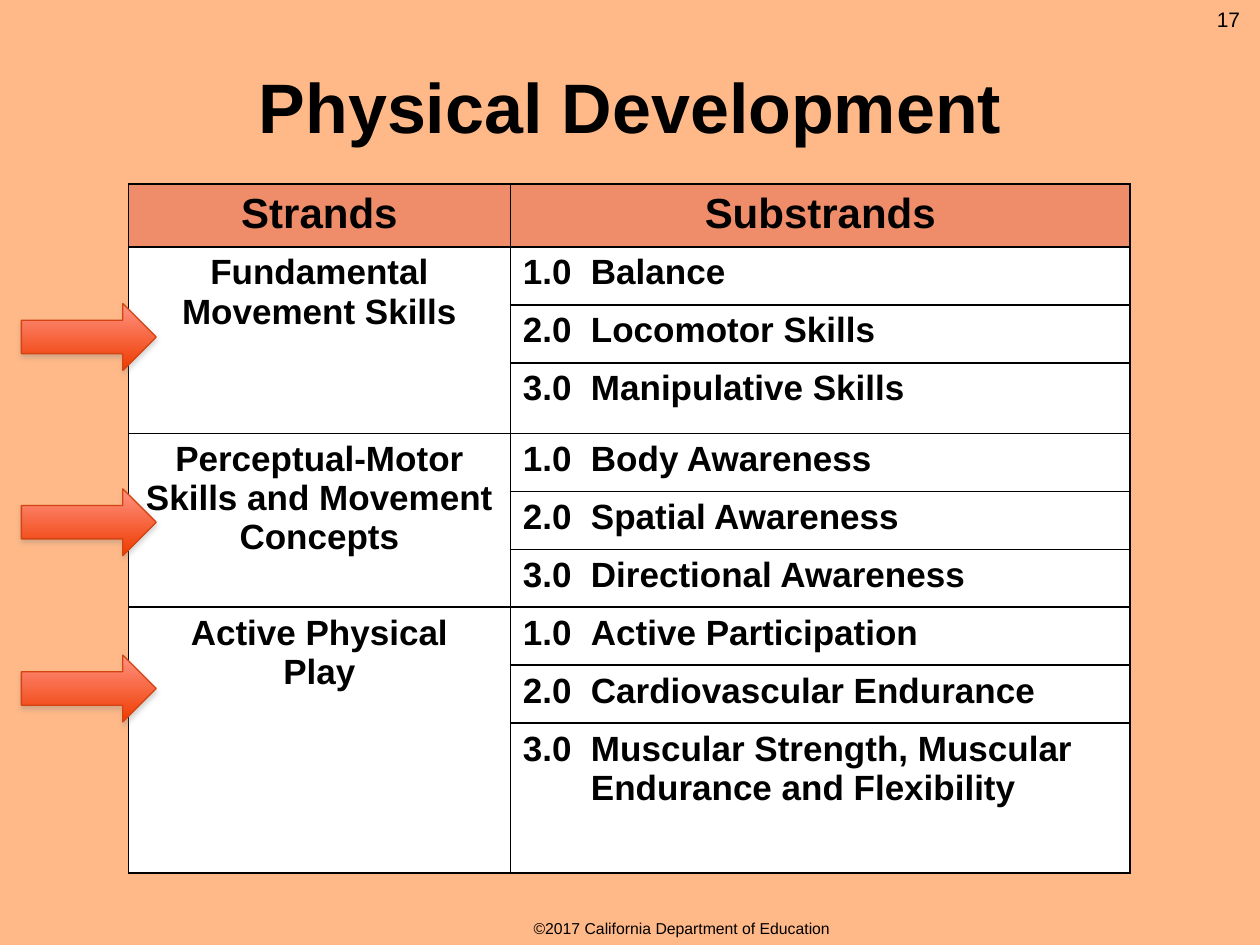
from lxml.etree import SubElement
from pptx import Presentation
from pptx.dml.color import RGBColor
from pptx.enum.shapes import MSO_SHAPE
from pptx.enum.text import MSO_ANCHOR, PP_ALIGN
from pptx.oxml.ns import qn
from pptx.util import Inches, Pt

BACKGROUND = RGBColor(0xFF, 0xB9, 0x88)
BLACK = RGBColor(0x00, 0x00, 0x00)
WHITE = RGBColor(0xFF, 0xFF, 0xFF)
HEADER_FILL = RGBColor(0xEF, 0x8C, 0x6A)
ARROW_TOP = RGBColor(0xFF, 0x93, 0x83)
ARROW_BOTTOM = RGBColor(0xEF, 0x3B, 0x00)
ARROW_LINE = RGBColor(0xD3, 0x44, 0x12)
SHADOW = RGBColor(0x80, 0x80, 0x80)

NUMBER_INDENT = Inches(0.54)
COLUMN_WIDTHS = (3.03, 4.92)
ROW_HEIGHTS = (0.5, 0.46, 0.46, 0.56, 0.46, 0.46, 0.46, 0.46, 0.46, 1.19)
ARROW_TOPS = (2.41, 3.88, 5.2)
STRANDS = (
    ("Fundamental Movement Skills",
     ("Balance", "Locomotor Skills", "Manipulative Skills")),
    ("Perceptual-Motor Skills and Movement Concepts",
     ("Body Awareness", "Spatial Awareness", "Directional Awareness")),
    ("Active Physical\nPlay",
     ("Active Participation", "Cardiovascular Endurance",
      "Muscular Strength, Muscular Endurance and Flexibility")),
)


def write_text(text_frame, text, size, bold=False, align=PP_ALIGN.CENTER):
    """Fill a text frame with evenly formatted paragraphs."""
    text_frame.text = text
    for paragraph in text_frame.paragraphs:
        paragraph.alignment = align
        for run in paragraph.runs:
            run.font.name = "Arial"
            run.font.size = Pt(size)
            run.font.bold = bold
            run.font.color.rgb = BLACK


def add_text(slide, text, left, top, width, height, size, bold=False, anchor=MSO_ANCHOR.MIDDLE):
    """Add a wrapped, centred text box."""
    box = slide.shapes.add_textbox(Inches(left), Inches(top), Inches(width), Inches(height))
    box.text_frame.word_wrap = True
    box.text_frame.vertical_anchor = anchor
    write_text(box.text_frame, text, size, bold)


def add_borders(cell):
    """Draw a thin black line on each side of a cell."""
    properties = cell._tc.get_or_add_tcPr()
    for side in ("lnL", "lnR", "lnT", "lnB"):
        line = SubElement(properties, qn(f"a:{side}"), w=str(Pt(1)))
        fill = SubElement(line, qn("a:solidFill"))
        SubElement(fill, qn("a:srgbClr"), val=str(BLACK))


def hang_number(paragraph):
    """Hang the number of a substrand in front of its wrapped text."""
    properties = paragraph._p.get_or_add_pPr()
    properties.set("marL", str(NUMBER_INDENT))
    properties.set("indent", str(-NUMBER_INDENT))


def add_strand_table(slide):
    """Add the table of strands with their numbered substrands."""
    frame = slide.shapes.add_table(
        len(ROW_HEIGHTS), len(COLUMN_WIDTHS), Inches(1.02), Inches(1.46),
        Inches(sum(COLUMN_WIDTHS)), Inches(sum(ROW_HEIGHTS)))
    table = frame.table
    for column, width in zip(table.columns, COLUMN_WIDTHS):
        column.width = Inches(width)
    for index, height in enumerate(ROW_HEIGHTS):
        table.rows[index].height = Inches(height)
        for cell in table.rows[index].cells:
            add_borders(cell)
            cell.fill.solid()
            cell.fill.fore_color.rgb = WHITE if index else HEADER_FILL
    for column, heading in enumerate(("Strands", "Substrands")):
        write_text(table.cell(0, column).text_frame, heading, 24, True)
    row = 1
    for strand, substrands in STRANDS:
        strand_cell = table.cell(row, 0)
        strand_cell.merge(table.cell(row + len(substrands) - 1, 0))
        write_text(strand_cell.text_frame, strand, 20, True)
        for number, substrand in enumerate(substrands, 1):
            text_frame = table.cell(row, 1).text_frame
            write_text(text_frame, f"{number}.0\t{substrand}", 20, True, PP_ALIGN.LEFT)
            hang_number(text_frame.paragraphs[0])
            row += 1


def add_shadow(shape):
    """Give a shape a soft shadow below it."""
    shape.shadow.inherit = False
    effects = shape._element.spPr.find(qn("a:effectLst"))
    shadow = SubElement(effects, qn("a:outerShdw"), blurRad=str(Pt(3.1)),
                        dist=str(Pt(1.8)), dir="5400000", rotWithShape="0")
    color = SubElement(shadow, qn("a:srgbClr"), val=str(SHADOW))
    SubElement(color, qn("a:alpha"), val="35000")


def add_arrow(slide, top):
    """Add a gradient arrow pointing at a strand."""
    arrow = slide.shapes.add_shape(
        MSO_SHAPE.RIGHT_ARROW, Inches(0.17), Inches(top), Inches(1.07), Inches(0.53))
    arrow.fill.gradient()
    arrow.fill.gradient_angle = 270
    for stop, color in zip(arrow.fill.gradient_stops, (ARROW_TOP, ARROW_BOTTOM)):
        stop.color.rgb = color
    arrow.line.color.rgb = ARROW_LINE
    arrow.line.width = Pt(0.75)
    add_shadow(arrow)


def main():
    """Build the slide and save it."""
    presentation = Presentation()
    presentation.slide_width = Inches(10)
    presentation.slide_height = Inches(7.5)
    slide = presentation.slides.add_slide(presentation.slide_layouts[6])
    slide.background.fill.solid()
    slide.background.fill.fore_color.rgb = BACKGROUND
    add_text(slide, "©2017 California Department of Education", 0.82, 7.24, 9.18, 0.25, 9)
    add_text(slide, "Physical Development", 0.5, 0.21, 9, 1.25, 40, True)
    add_text(slide, "17", 9.5, 0, 0.5, 0.4, 12, anchor=MSO_ANCHOR.TOP)
    add_strand_table(slide)
    for top in ARROW_TOPS:
        add_arrow(slide, top)
    presentation.save("out.pptx")


if __name__ == "__main__":
    main()
